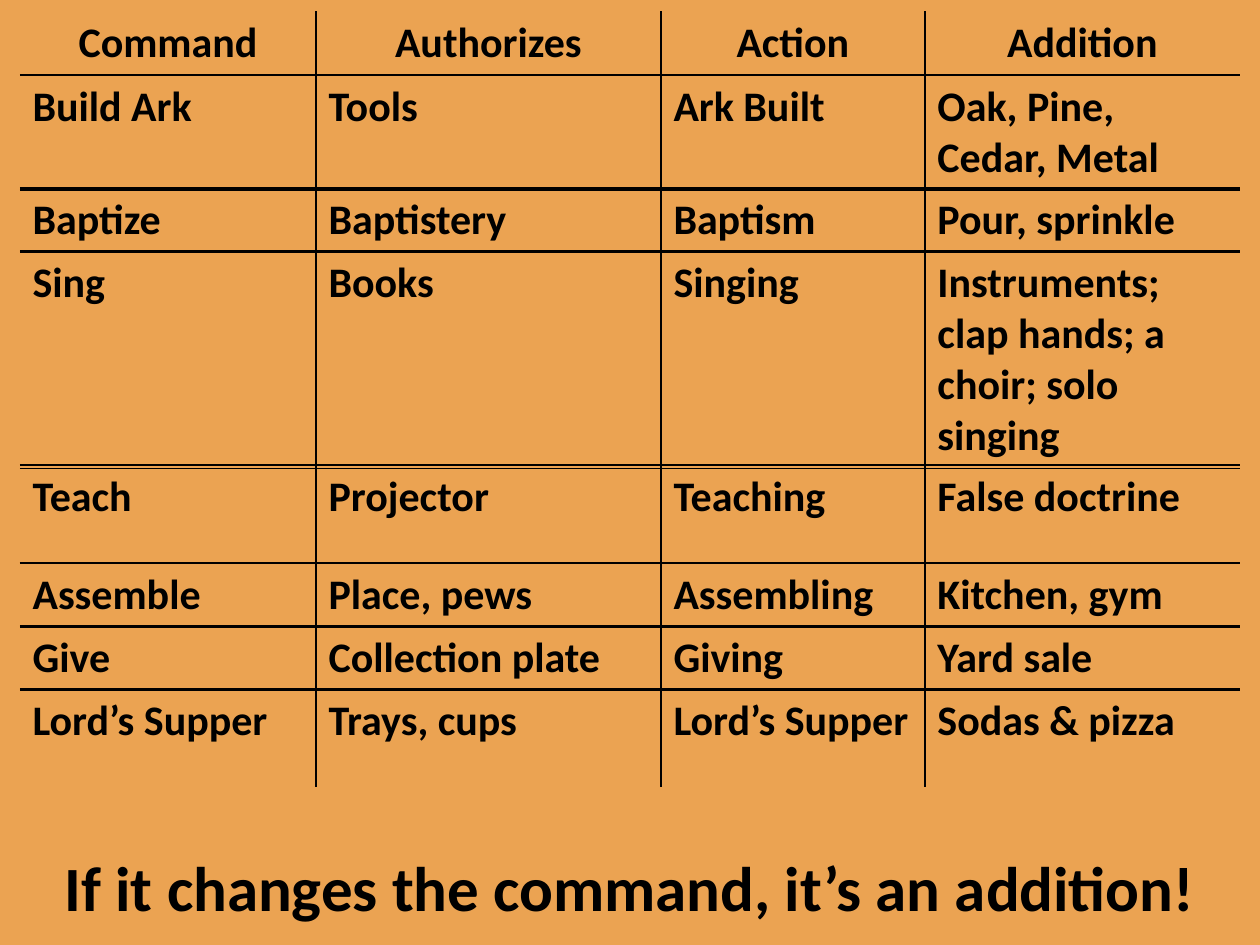
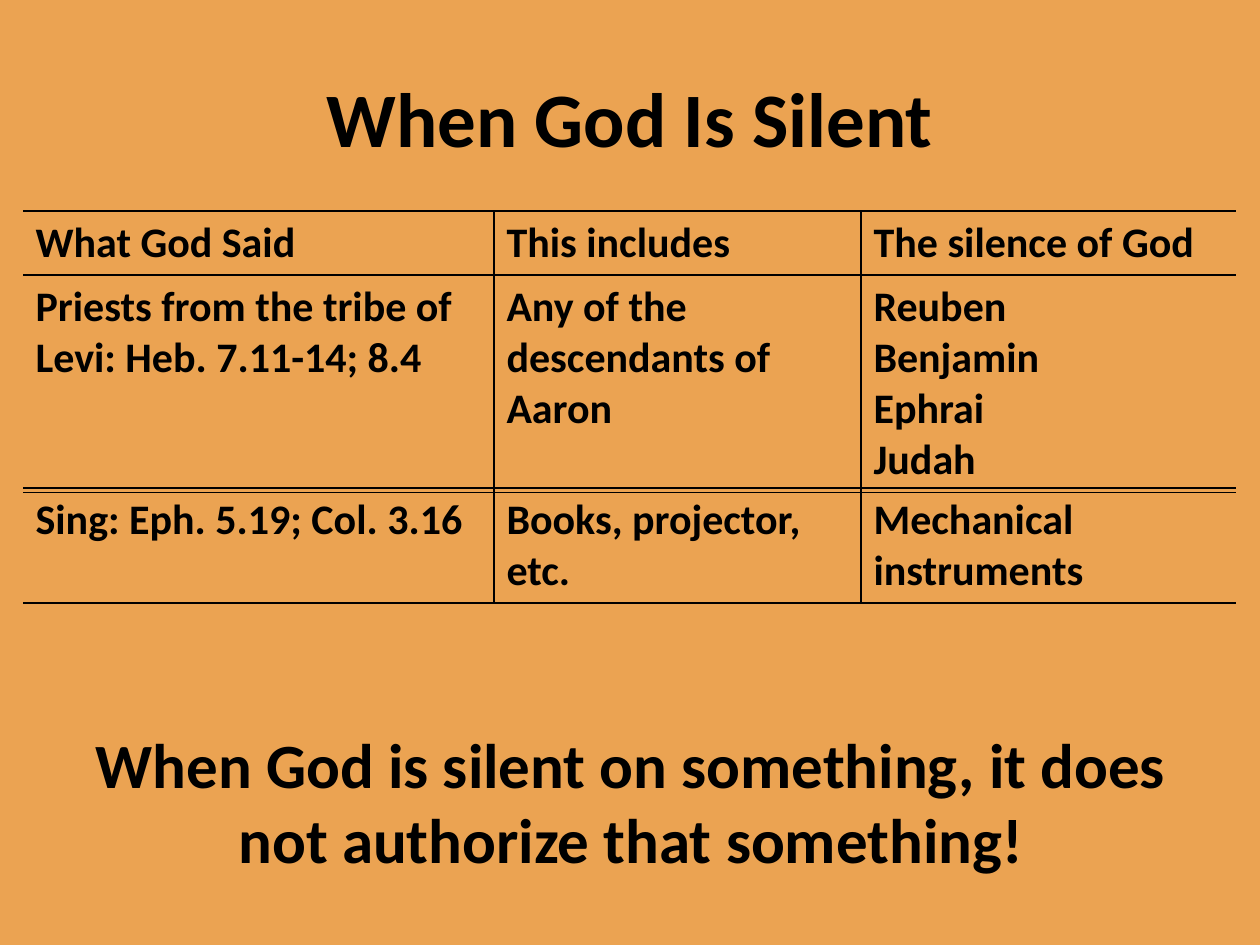
from lxml import etree
from pptx import Presentation
from pptx import util as u
from pptx.dml.color import RGBColor
from pptx.enum import shapes, text
from pptx.oxml.ns import qn

EMU_PER_PX = 914400 / 126
SLIDE_BOX = (0, 0, 1260, 945)
ORANGE = RGBColor(0xEB, 0xA3, 0x52)
BLACK = RGBColor(0, 0, 0)
CENTER = text.PP_ALIGN.CENTER
TITLE_FONT = {"name": "Calibri", "bold": True, "size": u.Pt(44)}
CLOSING_FONT = TITLE_FONT | {"size": u.Pt(36)}
CELL_FONT = TITLE_FONT | {"size": u.Pt(24)}

COMMAND_COLUMNS = (296, 345, 264, 315)
COMMAND_TABLES = [
    ([64, 113], [("Command", "Authorizes", "Action", "Addition"),
                 ("Build Ark", "Tools", "Ark Built", "Oak, Pine, Cedar, Metal")]),
    ([63], [("Baptize", "Baptistery", "Baptism", "Pour, sprinkle")]),
    ([214], [("Sing", "Books", "Singing",
              "Instruments; clap hands; a choir; solo singing")]),
    ([98], [("Teach", "Projector", "Teaching", "False doctrine")]),
    ([63], [("Assemble", "Place, pews", "Assembling", "Kitchen, gym")]),
    ([63], [("Give", "Collection plate", "Giving", "Yard sale")]),
    ([98], [("Lord’s Supper", "Trays, cups", "Lord’s Supper", "Sodas & pizza")]),
]
SILENCE_COLUMNS = (471, 367, 375)
SILENCE_TABLES = [
    ([64, 213], [("What God Said", "This includes", "The silence of God"),
                 ("Priests from the tribe of Levi: Heb. 7.11-14; 8.4",
                  "Any of the descendants of Aaron",
                  "Reuben\nBenjamin\nEphrai\nJudah")]),
    ([113], [("Sing: Eph. 5.19; Col. 3.16", "Books, projector, etc.",
              "Mechanical instruments")]),
]


def px(length):
    """Turn pixels into EMU."""
    return u.Emu(round(length * EMU_PER_PX))


def write(frame, content, font, alignment=None):
    """Fill a text frame, one paragraph a line, in the given format."""
    frame.text = content
    for paragraph in frame.paragraphs:
        paragraph.alignment = alignment
        for name, value in font.items():
            setattr(paragraph.font, name, value)
        paragraph.font.color.rgb = BLACK


def add_background(slide):
    """Cover the slide with the orange panel, behind everything else."""
    panel = slide.shapes.add_shape(shapes.MSO_SHAPE.RECTANGLE, *map(px, SLIDE_BOX))
    panel.shadow.inherit = False
    panel.fill.solid()
    panel.fill.fore_color.rgb = ORANGE
    panel.line.fill.background()
    slide.shapes._spTree.insert(2, panel._element)


def add_title(slide, box, content):
    """Place the title in its placeholder."""
    title = slide.shapes.title
    title.left, title.top, title.width, title.height = map(px, box)
    write(title.text_frame, content, TITLE_FONT, CENTER)
    title.text_frame.vertical_anchor = text.MSO_ANCHOR.MIDDLE


def add_closing(slide, box, content):
    """Place the centred conclusion of the slide."""
    frame = slide.shapes.add_textbox(*map(px, box)).text_frame
    frame.word_wrap = True
    frame.auto_size = text.MSO_AUTO_SIZE.SHAPE_TO_FIT_TEXT
    write(frame, content, CLOSING_FONT, CENTER)


def set_borders(cell, visible):
    """Rule the visible sides of a cell and clear the others."""
    properties = cell._tc.get_or_add_tcPr()
    for side in "LRTB":
        line = etree.SubElement(properties, qn(f"a:ln{side}"), w=str(u.Pt(1)))
        if side in visible:
            fill = etree.SubElement(line, qn("a:solidFill"))
            etree.SubElement(fill, qn("a:srgbClr"), val=str(BLACK))
        else:
            etree.SubElement(line, qn("a:noFill"))


def add_table(slide, left, top, columns, heights, rows, open_sides, header_alignment):
    """Place one ruled table whose open sides carry no line."""
    box = (left, top, sum(columns), sum(heights))
    table = slide.shapes.add_table(len(rows), len(columns), *map(px, box)).table
    table.first_row = table.horz_banding = False
    for column, width in zip(table.columns, columns):
        column.width = px(width)
    for row, height in zip(table.rows, heights):
        row.height = px(height)
    for i, row in enumerate(rows):
        for j, content in enumerate(row):
            cell = table.cell(i, j)
            edges = {"L": j == 0, "R": j == len(row) - 1,
                     "T": i == 0, "B": i == len(rows) - 1}
            set_borders(cell, [side for side, outer in edges.items()
                               if not (outer and side in open_sides)])
            cell.fill.background()
            alignment = header_alignment if i == 0 else None
            write(cell.text_frame, content, CELL_FONT, alignment)


def add_table_stack(slide, left, top, columns, tables, open_ends="", header_alignment=None):
    """Stack tables downwards, the first of them with a header row."""
    for index, (heights, rows) in enumerate(tables):
        open_sides = "LR"
        if index == 0:
            open_sides += open_ends[:1]
        if index == len(tables) - 1:
            open_sides += open_ends[1:]
        alignment = header_alignment if index == 0 else None
        add_table(slide, left, top, columns, heights, rows, open_sides, alignment)
        top += sum(heights)


def build_commands(presentation):
    """Build the slide on commands and additions."""
    slide = presentation.slides.add_slide(presentation.slide_layouts[6])
    add_background(slide)
    add_table_stack(slide, 20, 11, COMMAND_COLUMNS, COMMAND_TABLES, "TB", CENTER)
    add_closing(slide, (0, 842, 1260, 89), "If it changes the command, it’s an addition!")


def build_silence(presentation):
    """Build the slide on the silence of God."""
    slide = presentation.slides.add_slide(presentation.slide_layouts[5])
    add_background(slide)
    add_title(slide, (63, 38, 1134, 158), "When God Is Silent")
    add_table_stack(slide, 23, 211, SILENCE_COLUMNS, SILENCE_TABLES)
    add_closing(slide, (52, 719, 1158, 165),
                "When God is silent on something, it does not authorize that something!")


def main():
    """Build and save the presentation."""
    presentation = Presentation()
    presentation.slide_width, presentation.slide_height = map(px, SLIDE_BOX[2:])
    build_commands(presentation)
    build_silence(presentation)
    presentation.save("out.pptx")


if __name__ == "__main__":
    main()
